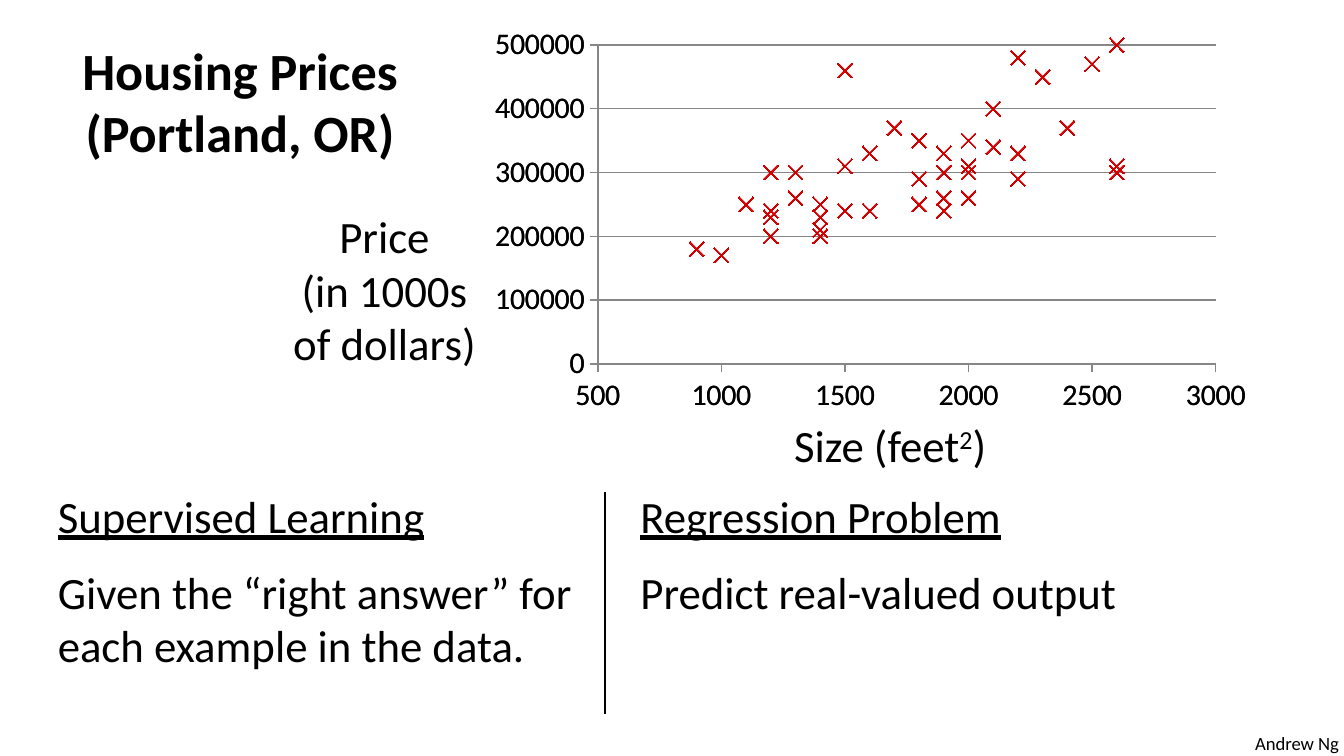
from typing import NamedTuple

from lxml import etree
from pptx import Presentation, util as u
from pptx.chart.data import XyChartData
from pptx.dml.color import RGBColor
from pptx.enum import chart as ch, shapes as sh, text as tx
from pptx.oxml import parse_xml
from pptx.oxml.ns import nsdecls, qn

WIDE = u.Inches(10)
HIGH = WIDE * 9 // 16
FACE = "Calibri"
INK, GREY, RED = "000000", "878787", "D00000"

HUNDREDS = [
    21, 16, 24, 14, 30, 20, 15, 14, 14, 15, 19, 20,
    19, 45, 13, 23, 13, 12, 26, 30, 18, 19, 16, 20,
    39, 11, 15, 25, 22, 26, 18, 10, 20, 31, 18, 14,
    12, 21, 42, 22, 17, 22, 26, 12, 9, 19, 12,
]
COSTS = [
    40, 33, 37, 23, 54, 30, 31, 20, 21, 24, 24, 35,
    33, 70, 26, 45, 30, 20, 50, 60, 25, 26, 24, 26,
    57, 25, 46, 47, 48, 30, 35, 17, 31, 58, 29, 25,
    23, 34, 55, 29, 37, 33, 31, 30, 18, 30, 24,
]


class Box(NamedTuple):
    """Shares of the slide's size, in percent."""
    x: float
    y: float
    w: float
    h: float

    def emu(self) -> tuple[int, ...]:
        sides = (WIDE, HIGH, WIDE, HIGH)
        return tuple(int(s * v / 100) for s, v in zip(sides, self))


class Topic(NamedTuple):
    box: Box
    head: str
    body: str


TOPICS = [
    Topic(Box(3.3, 63.7, 43.8, 26.9), "Supervised Learning",
          "Given the “right answer” for each example in the data."),
    Topic(Box(46.65, 63.7, 45, 19.8), "Regression Problem",
          "Predict real-valued output"),
]


def tint(code: str) -> RGBColor:
    return RGBColor.from_string(code)


def place(shape, box: Box) -> None:
    shape.left, shape.top, shape.width, shape.height = box.emu()


def write(shape, *lines: str, size: float = 24, bold: bool = False,
          align=tx.PP_ALIGN.LEFT, wrap: bool = True, gap: float = 0,
          under: bool = False) -> None:
    frame = shape.text_frame
    frame.word_wrap = wrap
    frame.auto_size = tx.MSO_AUTO_SIZE.NONE
    frame.vertical_anchor = tx.MSO_ANCHOR.TOP
    for i, line in enumerate(lines):
        para = frame.add_paragraph() if i else frame.paragraphs[0]
        para.alignment = align
        para.space_before = u.Pt(gap if i else 0)
        props = para._p.get_or_add_pPr()
        props.set("marL", "0")
        props.set("indent", "0")
        etree.SubElement(props, qn("a:buNone"))
        for j, part in enumerate(line.split("^")):
            run = para.add_run()
            run.text = part
            font = run.font
            font.name, font.size, font.bold = FACE, u.Pt(size), bold
            font.underline = under and i == 0
            font.color.rgb = tint(INK)
            if j % 2:
                run._r.get_or_add_rPr().set("baseline", "30000")


def label(slide, box: Box, *lines: str, **look) -> None:
    write(slide.shapes.add_textbox(*box.emu()), *lines, **look)


def scale(axis, low: float, high: float, step: float) -> None:
    axis.minimum_scale, axis.maximum_scale = low, high
    axis.major_unit = step
    axis.major_tick_mark = ch.XL_TICK_MARK.OUTSIDE
    axis.minor_tick_mark = ch.XL_TICK_MARK.NONE
    axis.tick_labels.number_format = "General"
    axis.tick_labels.number_format_is_linked = False
    axis.format.line.color.rgb = tint(GREY)


def scatter(slide, box: Box) -> None:
    data = XyChartData()
    homes = data.add_series("Series 1")
    for size, cost in zip(HUNDREDS, COSTS):
        homes.add_data_point(size * 100, cost * 10000)
    chart = slide.shapes.add_chart(
        ch.XL_CHART_TYPE.XY_SCATTER, *box.emu(), data).chart
    chart.has_title = chart.has_legend = False
    chart.font.name, chart.font.size = FACE, u.Pt(16)
    chart.font.color.rgb = tint(INK)

    scale(chart.category_axis, 500, 3000, 500)
    scale(chart.value_axis, 0, 500000, 100000)
    chart.category_axis.has_major_gridlines = False
    chart.value_axis.has_major_gridlines = True
    chart.value_axis.major_gridlines.format.line.color.rgb = tint(GREY)

    plot = chart.plots[0]
    plot.vary_by_categories = False
    dots = plot.series[0]
    dots.format.line.fill.background()
    mark = dots.marker
    mark.style, mark.size = ch.XL_MARKER_STYLE.X, 8
    mark.format.fill.solid()
    mark.format.fill.fore_color.rgb = tint(RED)
    mark.format.line.color.rgb = tint(RED)

    area = chart._chartSpace.chart.plotArea
    for old in area.findall(qn("c:layout")):
        area.remove(old)
    spots = {"x": 0.15, "y": 0.06, "w": 0.79, "h": 0.79}
    rules = "".join(f'<c:{k} val="{v}"/>' for k, v in spots.items())
    area.insert(0, parse_xml(
        f'<c:layout {nsdecls("c")}><c:manualLayout>'
        '<c:layoutTarget val="inner"/><c:xMode val="edge"/>'
        f'<c:yMode val="edge"/>{rules}</c:manualLayout></c:layout>'))


def rule(slide, x: float, top: float, end: float) -> None:
    line = slide.shapes.add_connector(
        sh.MSO_CONNECTOR.STRAIGHT, int(WIDE * x / 100), int(HIGH * top / 100),
        int(WIDE * x / 100), int(HIGH * end / 100))
    line.line.color.rgb = tint(INK)
    line.line.width = u.Pt(1.25)
    etree.SubElement(line._element.spPr, qn("a:effectLst"))


def main() -> None:
    deck = Presentation()
    deck.slide_width, deck.slide_height = WIDE, HIGH
    slide = deck.slides.add_slide(deck.slide_layouts[3])
    mid = tx.PP_ALIGN.CENTER

    for _ in range(2):
        scatter(slide, Box(35.75, 2.75, 58.2, 53.4))
    title, *bodies = slide.placeholders
    place(title, Box(5, 4.1, 25.7, 18.5))
    write(title, "Housing Prices", "(Portland, OR)",
          size=28, bold=True, align=mid, wrap=False)
    for body, topic in zip(bodies, TOPICS):
        place(body, topic.box)
        write(body, topic.head, topic.body, gap=12, under=True)

    label(slide, Box(20, 26.7, 17.2, 23.3),
          "Price", "(in 1000s of dollars)", align=mid)
    label(slide, Box(58.1, 54.4, 16.6, 8.9), "Size (feet^2^)", wrap=False)
    label(slide, Box(92.4, 95.9, 8.4, 4.8), "Andrew Ng", size=10, wrap=False)
    rule(slide, 45, 65.1, 94.5)
    deck.save("out.pptx")


if __name__ == "__main__":
    main()
